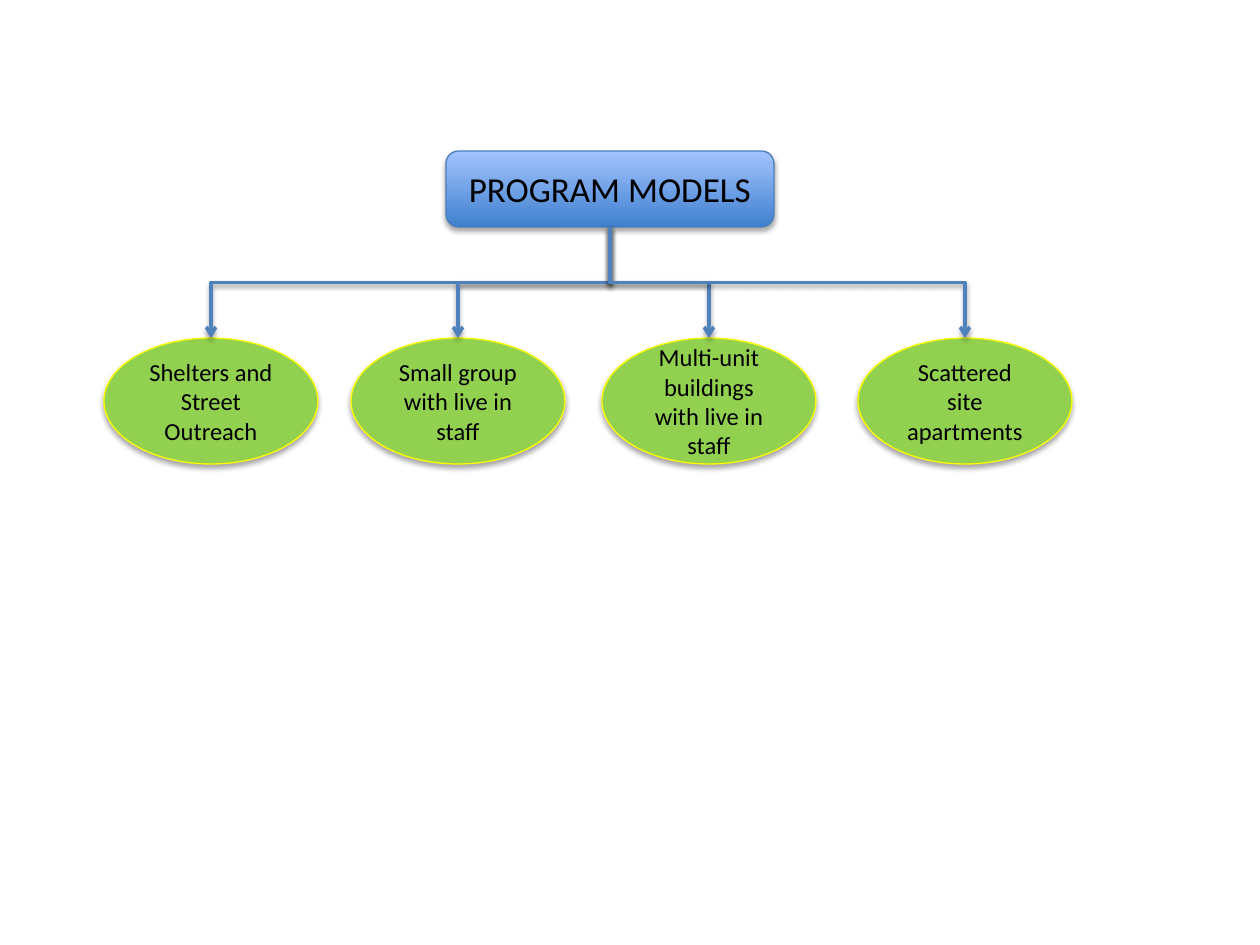
"""Build a slide with a tree of program models."""
import dataclasses

import lxml.etree
import pptx
import pptx.dml.color
import pptx.enum.shapes
import pptx.enum.text
import pptx.oxml
import pptx.oxml.ns
import pptx.util

EMU_PER_PX = 914400 // 126
BLACK = pptx.dml.color.RGBColor(0x00, 0x00, 0x00)
GREEN = pptx.dml.color.RGBColor(0x92, 0xD0, 0x50)
YELLOW = pptx.dml.color.RGBColor(0xFF, 0xFF, 0x00)
DEEP_BLUE = pptx.dml.color.RGBColor(0x3F, 0x80, 0xCE)
PALE_BLUE = pptx.dml.color.RGBColor(0xA4, 0xC4, 0xFF)
OUTLINE_BLUE = pptx.dml.color.RGBColor(0x4B, 0x7E, 0xBC)
ARROW_BLUE = pptx.dml.color.RGBColor(0x4F, 0x81, 0xBD)


@dataclasses.dataclass(frozen=True)
class Node:
    text: str
    left: int
    top: int
    width: int
    height: int
    font_size: int
    line_color: pptx.dml.color.RGBColor
    kind: pptx.enum.shapes.MSO_SHAPE = pptx.enum.shapes.MSO_SHAPE.OVAL

    @property
    def center(self) -> int:
        return self.left + self.width // 2


ROOT = Node("PROGRAM MODELS", 446, 151, 328, 76, 20, OUTLINE_BLUE,
            pptx.enum.shapes.MSO_SHAPE.ROUNDED_RECTANGLE)
MODELS = [
    Node(text, left, 338, 214, 126, 14, YELLOW)
    for text, left in (
        ("Shelters and Street Outreach", 104),
        ("Small group with live in staff", 351),
        ("Multi-unit buildings with live in staff", 602),
        ("Scattered site apartments", 858),
    )
]


def px(length: float) -> pptx.util.Emu:
    return pptx.util.Emu(int(length * EMU_PER_PX))


def add_shadow(shape, distance: float, opacity: int) -> None:
    shape._element.spPr.append(pptx.oxml.parse_xml(
        f'<a:effectLst {pptx.oxml.ns.nsdecls("a")}>'
        f'<a:outerShdw blurRad="{pptx.util.Pt(3.1)}" dist="{pptx.util.Pt(distance)}"'
        ' dir="5400000" rotWithShape="0">'
        f'<a:srgbClr val="{BLACK}"><a:alpha val="{opacity * 1000}"/></a:srgbClr>'
        '</a:outerShdw></a:effectLst>'))


def add_node(slide, node: Node):
    shape = slide.shapes.add_shape(
        node.kind, px(node.left), px(node.top), px(node.width), px(node.height))
    shape.fill.solid()
    shape.fill.fore_color.rgb = GREEN
    shape.line.color.rgb = node.line_color
    shape.line.width = pptx.util.Pt(0.75)
    add_shadow(shape, 1.8, 35)
    text_frame = shape.text_frame
    text_frame.word_wrap = True
    text_frame.vertical_anchor = pptx.enum.text.MSO_ANCHOR.MIDDLE
    text_frame.text = node.text
    paragraph = text_frame.paragraphs[0]
    paragraph.alignment = pptx.enum.text.PP_ALIGN.CENTER
    font = paragraph.runs[0].font
    font.name = "Calibri"
    font.size = pptx.util.Pt(node.font_size)
    font.color.rgb = BLACK
    return shape


def add_branch(slide, parent: Node, child: Node) -> None:
    start_y = parent.top + parent.height
    half_drop = (child.top - start_y) / 2
    half_span = abs(child.center - parent.center) / 2
    middle_x = (parent.center + child.center) / 2
    middle_y = start_y + half_drop
    side = 1 if child.center > parent.center else -1
    connector = slide.shapes.add_connector(
        pptx.enum.shapes.MSO_CONNECTOR.ELBOW,
        px(middle_x + side * half_drop), px(middle_y - half_span),
        px(middle_x - side * half_drop), px(middle_y + half_span))
    rotation = 270 if side > 0 else 90
    connector._element.spPr.xfrm.set("rot", str(rotation * 60000))
    connector.line.color.rgb = ARROW_BLUE
    connector.line.width = pptx.util.Pt(2)
    lxml.etree.SubElement(
        connector.line._get_or_add_ln(), pptx.oxml.ns.qn("a:tailEnd"), type="arrow")
    add_shadow(connector, 1.6, 38)


def main() -> None:
    presentation = pptx.Presentation()
    presentation.slide_width = pptx.util.Inches(10)
    presentation.slide_height = pptx.util.Inches(7.5)
    slide = presentation.slides.add_slide(presentation.slide_layouts[6])
    root_shape = add_node(slide, ROOT)
    root_shape.fill.gradient()
    root_shape.fill.gradient_angle = 90
    for stop, color in zip(root_shape.fill.gradient_stops, (DEEP_BLUE, PALE_BLUE)):
        stop.color.rgb = color
    for model in MODELS:
        add_node(slide, model)
    for model in MODELS:
        add_branch(slide, ROOT, model)
    presentation.save("out.pptx")


if __name__ == "__main__":
    main()
